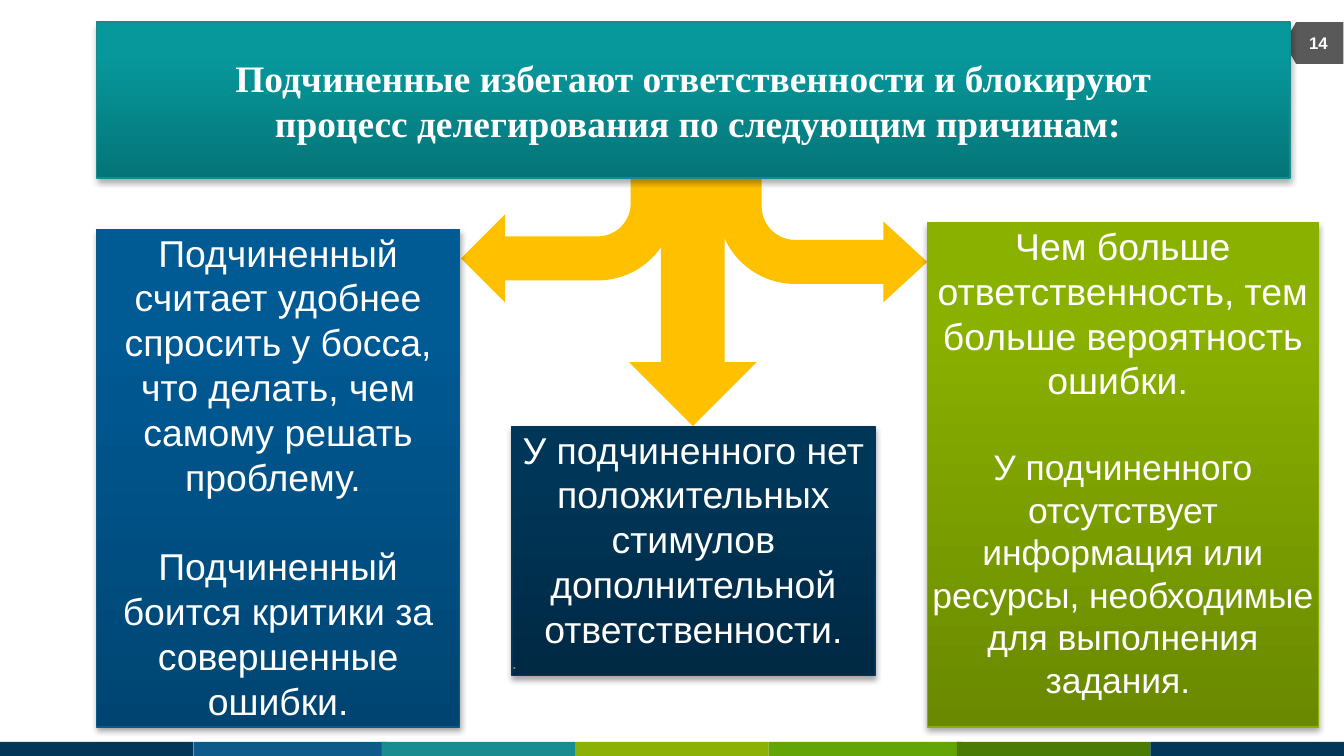
from pptx import Presentation, util as u
from pptx.dml.color import RGBColor
from pptx.enum import shapes, text
from pptx.oxml import parse_xml

HUES = {
    "white": "FFFFFF", "grey": "808080", "slate": "595959", "gold": "FFC000",
    "navy": "023759", "blue": "0E5A8B", "teal": "198C8F",
    "lime": "8BB106", "green": "63A406", "moss": "4A7B04",
}
# Panel styles: bottom colour, top colour, outline
PANELS = {
    "teal": ("057578", "07989C", "168C8F"),
    "blue": ("004572", "005A94", "0B598B"),
    "lime": ("6A8900", "8AB100", "8AB102"),
    "navy": ("002944", "003658", "003659"),
}
SHADOW = (
    '<a:effectLst xmlns:a="http://schemas.openxmlformats.org/drawingml/2006/main">'
    '<a:outerShdw blurRad="39400" dist="22900" dir="5400000" rotWithShape="0">'
    '<a:srgbClr val="000000"><a:alpha val="35000"/></a:srgbClr>'
    '</a:outerShdw></a:effectLst>'
)
KIND = shapes.MSO_SHAPE
ALIGN = text.PP_ALIGN


def rgb(hue):
    return RGBColor.from_string(hue)


class Deck:
    """Style and current slide; lengths count cells of a 100-column grid."""

    def __init__(self, wide=10):
        self.prs = Presentation()
        self.prs.slide_width = u.Inches(wide)
        self.prs.slide_height = u.Inches(wide * 9 / 16)
        self.cell = self.prs.slide_width / 100
        self.slide = self.prs.slides.add_slide(self.prs.slide_layouts[5])

    def grid(self, *cells):
        return [round(c * self.cell) for c in cells]

    def shape(self, kind, box, hue, turn=0, flip=False, adj=()):
        item = self.slide.shapes.add_shape(kind, *self.grid(*box))
        item.shadow.inherit = False
        item.fill.solid()
        item.fill.fore_color.rgb = rgb(HUES[hue])
        item.line.fill.background()
        item.rotation = turn
        if flip:
            item._element.spPr.xfrm.set("flipH", "1")
        for i, part in enumerate(adj):
            item.adjustments[i] = part

    def paint(self, item, look):
        low, top, edge = PANELS[look]
        item.fill.gradient()
        item.fill.gradient_angle = 90
        for stop, hue, pos in zip(item.fill.gradient_stops, (low, top), (0, 0.8)):
            stop.color.rgb = rgb(hue)
            stop.position = pos
        item.line.color.rgb = rgb(edge)
        item.line.width = u.Pt(0.75)
        item._element.spPr.append(parse_xml(SHADOW))

    def frame(self, item, anchor, wrap=True):
        box = item.text_frame
        box.margin_left = box.margin_right = box.margin_top = box.margin_bottom = 0
        box.auto_size = text.MSO_AUTO_SIZE.NONE
        box.word_wrap = wrap
        box.vertical_anchor = anchor
        return box

    def style(self, par, size=20, font="Arial", hue="white", bold=False,
              align=ALIGN.CENTER, gap=0):
        par.alignment = align
        par.space_before = u.Pt(gap)
        par.font.size = u.Pt(size)
        par.font.name = font
        par.font.bold = bold
        par.font.color.rgb = rgb(HUES[hue])

    def title(self, box, words):
        item = self.slide.shapes.title
        item.left, item.top, item.width, item.height = self.grid(*box)
        self.slide.shapes._spTree.append(item._element)  # above the arrows
        self.paint(item, "teal")
        body = self.frame(item, text.MSO_ANCHOR.MIDDLE, wrap=False)
        body.text = words
        self.style(body.paragraphs[0], font="Times New Roman", bold=True)

    def label(self, box, words):
        item = self.slide.shapes.add_textbox(*self.grid(*box))
        body = self.frame(item, text.MSO_ANCHOR.MIDDLE)
        body.text = words
        self.style(body.paragraphs[0], 9, bold=True)

    def panel(self, box, look, *pars):
        item = self.slide.shapes.add_shape(KIND.RECTANGLE, *self.grid(*box))
        self.paint(item, look)
        body = self.frame(item, text.MSO_ANCHOR.TOP)
        body.text = "\n".join(words for words, _ in pars)
        for par, (_, form) in zip(body.paragraphs, pars):
            self.style(par, **form)


def main():
    deck = Deck()

    # Footer stripe and page marker
    tones = ("navy", "blue", "teal", "lime", "green", "moss", "navy")
    lefts = (0, 14.4, 28.4, 42.8, 57.2, 71.2, 85.6)
    for left, hue in zip(lefts, tones):
        deck.shape(KIND.RECTANGLE, (left, 55.2, 14.4, 1.05), hue)
    deck.shape(KIND.FLOWCHART_OFFPAGE_CONNECTOR, (96.2, 1, 3.1, 4.4), "slate", turn=90)

    # Arrows from the heading to the three panels
    deck.shape(KIND.DOWN_ARROW, (46.8, 13.2, 9.5, 18.5), "gold")
    deck.shape(KIND.BENT_ARROW, (53.4, 9.4, 15.6, 13.1), "gold", turn=180,
               flip=True, adj=(0.25, 0.23, 0.25, 0.44))
    deck.shape(KIND.BENT_ARROW, (34.3, 9.4, 15.9, 13.1), "gold", turn=180)

    # Heading and page number
    deck.title((7.2, 1.65, 88.8, 11.6),
               "Подчиненные избегают ответственности и блокируют\v"
               " процесс делегирования по следующим причинам:")
    deck.label((96, 1.7, 4.2, 3), "14")

    # Reasons
    deck.panel((7.2, 17.1, 27, 37), "blue",
               ("Подчиненный считает удобнее спросить у босса, что делать, "
                "чем самому решать проблему. ", {}),
               ("Подчиненный боится критики за совершенные ошибки.",
                dict(gap=24)))
    deck.panel((69, 16.6, 29.1, 37.5), "lime",
               ("Чем больше ответственность, тем больше вероятность ошибки. ",
                {}),
               ("У подчиненного отсутствует информация или ресурсы, "
                "необходимые для выполнения задания. ", dict(size=19, gap=23)))
    deck.panel((38.1, 31.75, 27, 18.5), "navy",
               ("У подчиненного нет положительных стимулов дополнительной "
                "ответственности.", {}),
               (".", dict(size=10, hue="grey", align=ALIGN.JUSTIFY)))

    deck.prs.save("out.pptx")


if __name__ == "__main__":
    main()
